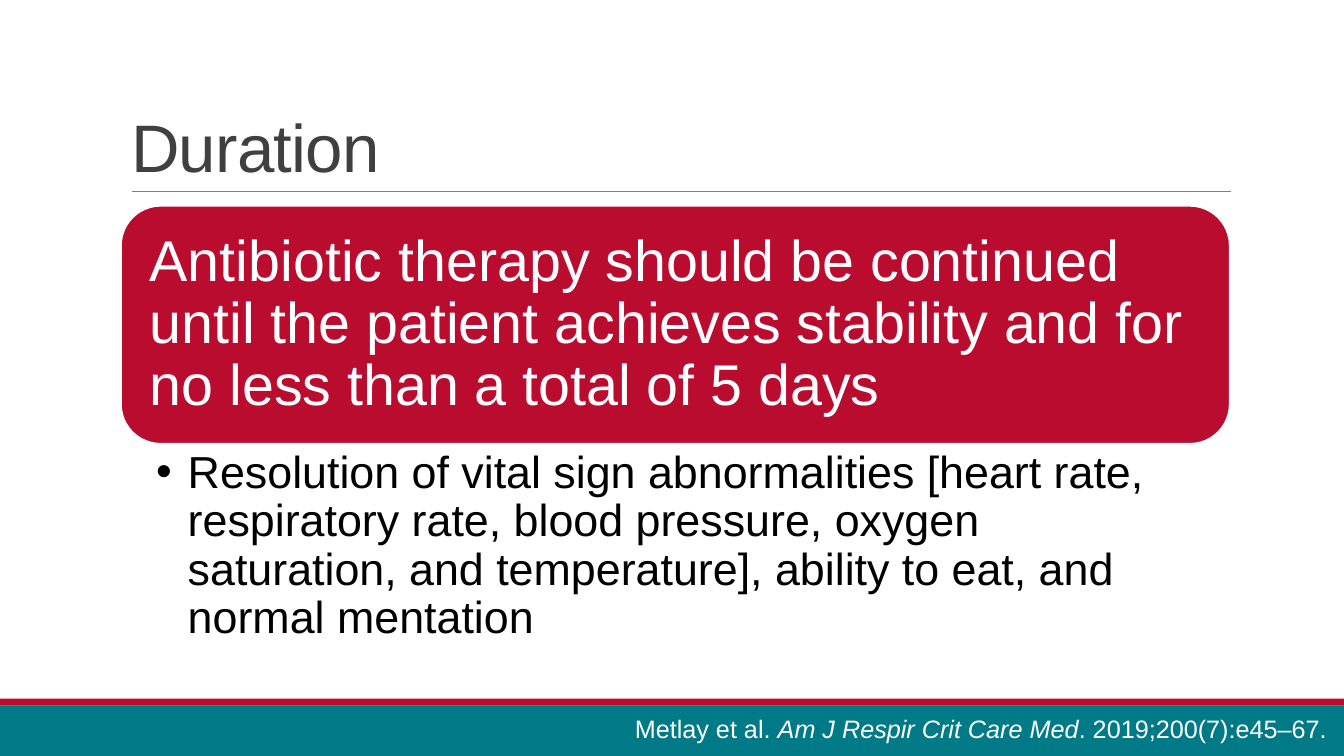
from lxml.etree import SubElement as Sub
from pptx import Presentation
from pptx.dml.color import RGBColor
from pptx.enum.shapes import MSO_CONNECTOR as Line, MSO_SHAPE as Shape
from pptx.enum.text import MSO_ANCHOR as Anchor, MSO_AUTO_SIZE as Fit, PP_ALIGN as Align
from pptx.oxml.ns import qn
from pptx.util import Pt

TEAL = RGBColor(0x00, 0x7A, 0x86)
RED = RGBColor(0xBA, 0x0C, 0x2F)
GREY = RGBColor(0x80, 0x80, 0x80)
DARK = RGBColor(0x40, 0x40, 0x40)
WHITE = RGBColor(0xFF, 0xFF, 0xFF)
BLACK = RGBColor(0x00, 0x00, 0x00)
WIDTH, HEIGHT = 960, 540
LEFT, SPAN = 86.4, 792


def style(para, size, color, space=None):
    para.alignment = Align.LEFT
    para.line_spacing = space
    font = para.font
    font.name, font.size = "Arial", Pt(size)
    font.color.rgb = color


def set_frame(frame, anchor, sides, ends):
    frame.word_wrap = True
    frame.auto_size = Fit.NONE
    frame.vertical_anchor = anchor
    frame.margin_left = frame.margin_right = Pt(sides)
    frame.margin_top = frame.margin_bottom = Pt(ends)


def add_block(slide, kind, box, color):
    block = slide.shapes.add_shape(kind, *map(Pt, box))
    block.shadow.inherit = False
    block.fill.solid()
    block.fill.fore_color.rgb = color
    block.line.fill.background()
    return block


def add_rule(slide, x1, x2, y):
    rule = slide.shapes.add_connector(Line.STRAIGHT, Pt(x1), Pt(y), Pt(x2), Pt(y))
    rule.line.color.rgb = GREY
    rule.line.width = Pt(0.5)
    Sub(rule._element.spPr, qn("a:effectLst"))


def set_title(slide, text):
    title = slide.shapes.title
    title.left, title.top = Pt(LEFT), Pt(22.3)
    title.width, title.height = Pt(SPAN), Pt(114.5)
    set_frame(title.text_frame, Anchor.BOTTOM, 7.2, 3.6)
    para = title.text_frame.paragraphs[0]
    run = para.add_run()
    run.text = text
    run._r.get_or_add_rPr().set("spc", "-50")
    style(para, 48, DARK, 0.85)


def add_card(slide, text):
    card = add_block(slide, Shape.ROUNDED_RECTANGLE, (LEFT, 147, SPAN, 170), RED)
    card.line.color.rgb = WHITE
    card.line.width = Pt(1.25)
    set_frame(card.text_frame, Anchor.MIDDLE, 12.3, 12.3)
    para = card.text_frame.paragraphs[0]
    para.text = text
    style(para, 41, WHITE, 0.9)


def add_bullet(slide, text):
    box = slide.shapes.add_textbox(Pt(LEFT), Pt(317), Pt(SPAN), Pt(144))
    set_frame(box.text_frame, Anchor.TOP, 25.2, 4.1)
    box.text_frame.margin_right = Pt(23)
    para = box.text_frame.paragraphs[0]
    para.text = text
    props = para._p.get_or_add_pPr()
    props.set("marL", str(Pt(22.5)))
    props.set("indent", str(-Pt(22.5)))
    Sub(props, qn("a:buFont")).set("typeface", "Arial")
    Sub(props, qn("a:buChar")).set("char", "•")
    style(para, 32, BLACK, 0.9)


def add_source(slide, parts):
    """Add the source line; parts pairs each text with its italic flag."""
    box = slide.shapes.add_textbox(Pt(446.4), Pt(506.2), Pt(513.6), Pt(29))
    set_frame(box.text_frame, Anchor.TOP, 7.2, 3.6)
    para = box.text_frame.paragraphs[0]
    for text, slant in parts:
        run = para.add_run()
        run.text = text
        run.font.italic = slant
    style(para, 18, WHITE)


def main():
    deck = Presentation()
    deck.slide_width, deck.slide_height = Pt(WIDTH), Pt(HEIGHT)
    slide = deck.slides.add_slide(deck.slide_layouts[5])
    add_block(slide, Shape.RECTANGLE, (0, 504, WIDTH, 36), TEAL)
    add_block(slide, Shape.RECTANGLE, (0, 499, WIDTH, 5), RED)
    add_rule(slide, 94.3, 879, 136.8)
    set_title(slide, "Duration")
    add_card(slide, "Antibiotic therapy should be continued until the patient "
                    "achieves stability and for no less than a total of 5 days")
    add_bullet(slide, "Resolution of vital sign abnormalities [heart rate, "
                      "respiratory rate, blood pressure, oxygen saturation, and "
                      "temperature], ability to eat, and normal mentation")
    add_source(slide, [("Metlay et al. ", False),
                       ("Am J Respir Crit Care Med", True),
                       (". 2019;200(7):e45–67.", False)])
    deck.save("out.pptx")


if __name__ == "__main__":
    main()
